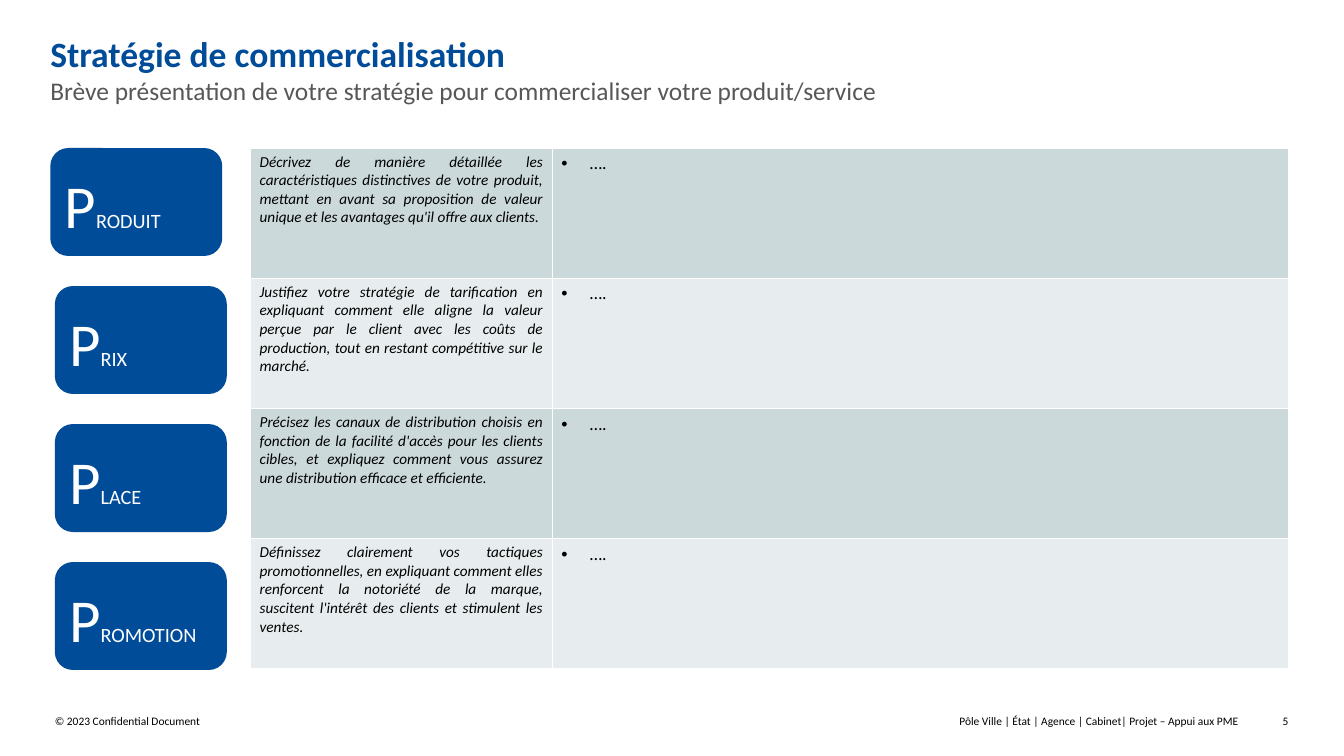
from dataclasses import dataclass

from pptx import Presentation
from pptx.dml.color import RGBColor
from pptx.enum.shapes import MSO_SHAPE as Shape
from pptx.enum.text import MSO_ANCHOR as Anchor, PP_ALIGN as Align
from pptx.oxml.ns import qn
from pptx.util import Pt
from lxml.etree import SubElement

BLUE = RGBColor(0x00, 0x4C, 0x99)
GREY = RGBColor(0x57, 0x57, 0x57)
BLACK = RGBColor(0x00, 0x00, 0x00)
WHITE = RGBColor(0xFF, 0xFF, 0xFF)
BANDS = (RGBColor(0xCC, 0xD9, 0xDB), RGBColor(0xE7, 0xED, 0xEE))
MARGINS = ("margin_left", "margin_top", "margin_right", "margin_bottom")

CARD_TOP, CARD_STEP, CARD_W, CARD_H = 116.6, 108.7, 135.4, 85
TABLE_LEFT, ROW_H = 197.3, 102.6
COLUMN_WIDTHS = (237.6, 579.8)
BULLET_INDENT = 22.5


@dataclass(frozen=True)
class Label:
    text: str
    left: float
    top: float
    width: float
    height: float
    size: float
    color: RGBColor = BLACK
    bold: bool = False
    align: Align = Align.LEFT


@dataclass(frozen=True)
class Lever:
    """One of the four P's: its card and its table row."""
    ending: str
    guidance: str
    card_left: float = 43.2


LABELS = (
    Label("Stratégie de commercialisation", 39.6, 25.2, 879, 34, 28, BLUE, True),
    Label("Brève présentation de votre stratégie pour commercialiser votre produit/service",
          39.6, 59, 979, 54, 20, GREY),
    Label("© 2023 Confidential Document", 43.2, 562.3, 465, 11, 9),
    Label("Pôle Ville | État | Agence | Cabinet| Projet – Appui aux PME",
          550, 562.3, 425, 11, 9, align=Align.RIGHT),
    Label("5", 988, 562.3, 26.6, 11, 9, align=Align.RIGHT),
)

LEVERS = (
    Lever("RODUIT", "Décrivez de manière détaillée les caractéristiques distinctives de votre "
          "produit, mettant en avant sa proposition de valeur unique et les avantages qu'il "
          "offre aux clients.", 39.6),
    Lever("RIX", "Justifiez votre stratégie de tarification en expliquant comment elle aligne "
          "la valeur perçue par le client avec les coûts de production, tout en restant "
          "compétitive sur le marché."),
    Lever("LACE", "Précisez les canaux de distribution choisis en fonction de la facilité "
          "d'accès pour les clients cibles, et expliquez comment vous assurez une distribution "
          "efficace et efficiente."),
    Lever("ROMOTION", "Définissez clairement vos tactiques promotionnelles, en expliquant "
          "comment elles renforcent la notoriété de la marque, suscitent l'intérêt des clients "
          "et stimulent les ventes."),
)


def add_run(p, text: str, size: float, color: RGBColor, **extra) -> None:
    r = p.add_run()
    r.text = text
    for name, value in {"name": "Calibri", "size": Pt(size), **extra}.items():
        setattr(r.font, name, value)
    r.font.color.rgb = color


def set_frame(tf, margin: float, anchor: Anchor) -> None:
    values = {"word_wrap": True, "vertical_anchor": anchor, **dict.fromkeys(MARGINS, Pt(margin))}
    for name, value in values.items():
        setattr(tf, name, value)


def add_label(slide, label: Label) -> None:
    box = slide.shapes.add_textbox(Pt(label.left), Pt(label.top), Pt(label.width), Pt(label.height))
    set_frame(box.text_frame, 0, Anchor.TOP)
    p = box.text_frame.paragraphs[0]
    p.alignment = label.align
    add_run(p, label.text, label.size, label.color, bold=label.bold)


def add_card(slide, lever: Lever, top: float) -> None:
    sp = slide.shapes.add_shape(Shape.ROUNDED_RECTANGLE, Pt(lever.card_left), Pt(top),
                                Pt(CARD_W), Pt(CARD_H))
    sp.shadow.inherit = False
    sp.fill.solid()
    sp.fill.fore_color.rgb = BLUE
    sp.line.fill.background()
    set_frame(sp.text_frame, 7.2, Anchor.MIDDLE)
    p = sp.text_frame.paragraphs[0]
    p.alignment = Align.LEFT
    p.line_spacing = 1.06
    add_run(p, "P", 48, WHITE)
    add_run(p, lever.ending, 16, WHITE)


def style_cell(cell, color: RGBColor) -> None:
    """Give the cell thin white borders, then its fill."""
    tc_pr = cell._tc.get_or_add_tcPr()
    for side in ("a:lnL", "a:lnR", "a:lnT", "a:lnB"):
        ln = SubElement(tc_pr, qn(side), w=str(Pt(1)))
        SubElement(SubElement(ln, qn("a:solidFill")), qn("a:srgbClr"), val=str(WHITE))
    cell.fill.solid()
    cell.fill.fore_color.rgb = color


def add_bullet(p) -> None:
    p_pr = p._p.get_or_add_pPr()
    p_pr.set("marL", str(Pt(BULLET_INDENT)))
    p_pr.set("indent", str(-Pt(BULLET_INDENT)))
    SubElement(p_pr, qn("a:buFont"), typeface="Arial")
    SubElement(p_pr, qn("a:buChar"), char="•")


def add_lever_table(slide) -> None:
    table = slide.shapes.add_table(len(LEVERS), len(COLUMN_WIDTHS), Pt(TABLE_LEFT), Pt(CARD_TOP),
                                   Pt(sum(COLUMN_WIDTHS)), Pt(ROW_H * len(LEVERS))).table
    table.first_row = table.horz_banding = False
    for column, width in zip(table.columns, COLUMN_WIDTHS):
        column.width = Pt(width)
    for i, lever in enumerate(LEVERS):
        table.rows[i].height = Pt(ROW_H)
        guidance, answer = table.rows[i].cells
        for cell in (guidance, answer):
            style_cell(cell, BANDS[i % 2])
        p = guidance.text_frame.paragraphs[0]
        p.alignment = Align.JUSTIFY
        add_run(p, lever.guidance, 12, BLACK, italic=True)
        p = answer.text_frame.paragraphs[0]
        add_bullet(p)
        add_run(p, "….", 14, BLACK)


def main() -> None:
    prs = Presentation()
    prs.slide_width, prs.slide_height = Pt(1058.4), Pt(595.44)
    slide = prs.slides.add_slide(prs.slide_layouts[6])
    for label in LABELS:
        add_label(slide, label)
    for i, lever in enumerate(LEVERS):
        add_card(slide, lever, CARD_TOP + i * CARD_STEP)
    add_lever_table(slide)
    prs.save("out.pptx")


if __name__ == "__main__":
    main()
